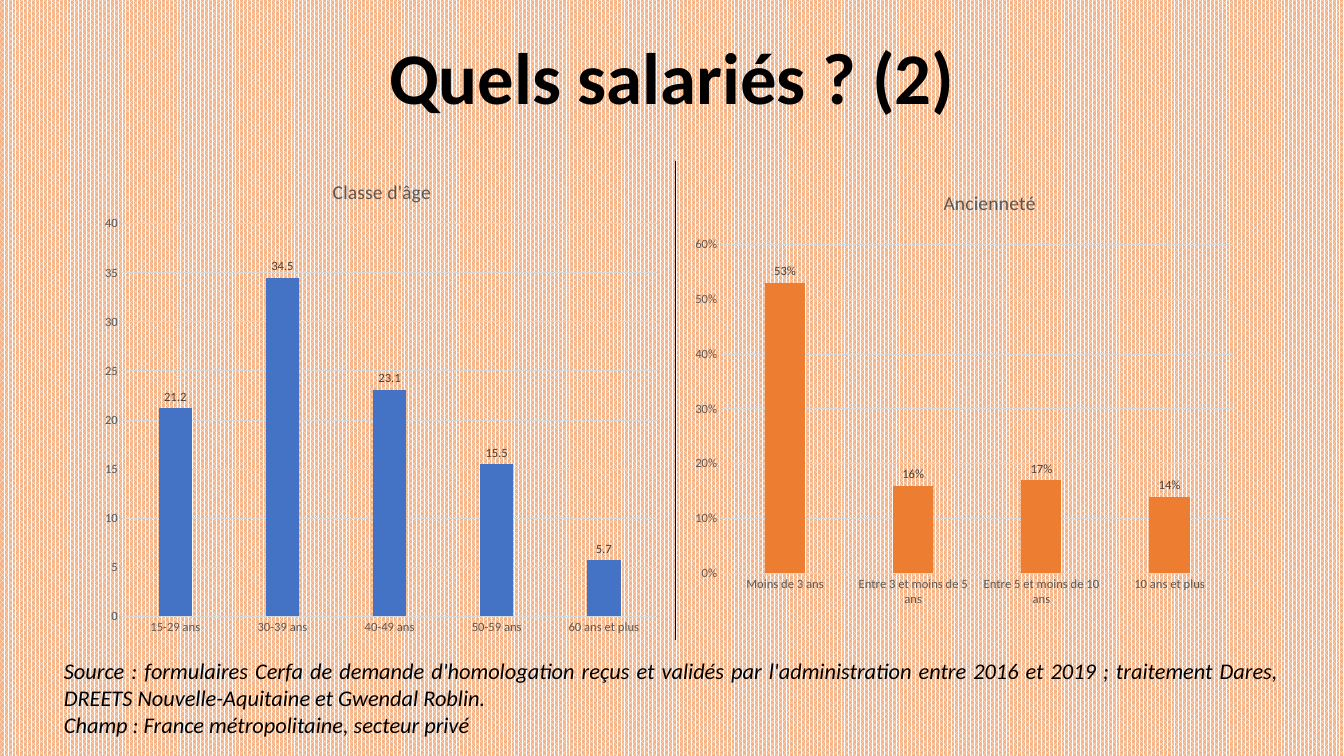
from pptx import Presentation
from pptx.chart.data import CategoryChartData
from pptx.dml.color import RGBColor
from pptx.enum.chart import XL_CHART_TYPE, XL_LABEL_POSITION as LabelPos, XL_TICK_MARK as Tick
from pptx.enum.dml import MSO_PATTERN
from pptx.enum.shapes import MSO_CONNECTOR
from pptx.enum.text import MSO_ANCHOR as Anchor, PP_ALIGN as Align
from pptx.oxml import parse_xml
from pptx.oxml.ns import nsdecls, qn
from pptx.oxml.xmlchemy import OxmlElement
from pptx.util import Emu, Pt
from dataclasses import dataclass


@dataclass(frozen=True)
class Theme:
    font: str = "Calibri"
    text: str = "000000"
    muted: str = "595959"
    label: str = "404040"
    grid: str = "D9D9D9"
    age: str = "4472C4"
    seniority: str = "ED7D31"
    paper: str = "F4B183"
    weave: str = "FFFFFF"
    title_size: int = 52
    source_size: int = 16
    chart_title_size: int = 14
    chart_size: int = 10
    axis_size: int = 9


THEME = Theme()
PX = 914400 / 100.8
rgb = RGBColor.from_string


def px(*lengths):
    return [Emu(round(length * PX)) for length in lengths]


def write(frame, *lines, size, color=THEME.text, align=Align.CENTER,
          bold=False, italic=False, spacing=None):
    """Put one paragraph per line of text into a text frame."""
    for number, line in enumerate(lines):
        paragraph = frame.add_paragraph() if number else frame.paragraphs[0]
        paragraph.alignment = align
        paragraph.line_spacing = spacing
        run = paragraph.add_run()
        run.text = line
        run.font.name, run.font.size = THEME.font, Pt(size)
        run.font.bold, run.font.italic = bold, italic
        run.font.color.rgb = rgb(color)


deck = Presentation()
deck.slide_width, deck.slide_height = px(1344, 756)
slide = deck.slides.add_slide(deck.slide_layouts[6])
weave = slide.background.fill
weave.patterned()
weave.pattern = MSO_PATTERN.PERCENT_75
weave.fore_color.rgb = rgb(THEME.weave)
weave.back_color.rgb = rgb(THEME.paper)

heading = slide.shapes.add_textbox(*px(92, 20, 1160, 121)).text_frame
heading.word_wrap = True
heading.vertical_anchor = Anchor.MIDDLE
write(heading, "Quels salariés ? (2)", size=THEME.title_size, bold=True, spacing=0.9)

# Title and plot places are fractions of the chart frame
CHARTS = [
    dict(title="Classe d'âge", box=(93, 155, 576, 491), color=THEME.age,
         shares={"15-29 ans": 21.2, "30-39 ans": 34.5, "40-49 ans": 23.1,
                 "50-59 ans": 15.5, "60 ans et plus": 5.7},
         top=40, step=5, formats=("0", "0.0"),
         title_at=dict(x=0.41, y=0.04), plot_at=dict(x=0.05, y=0.14, w=0.93, h=0.8)),
    dict(title="Ancienneté", box=(675, 161, 576, 491), color=THEME.seniority,
         shares={"Moins de 3 ans": 0.53, "Entre 3 et moins de 5 ans": 0.16,
                 "Entre 5 et moins de 10 ans": 0.17, "10 ans et plus": 0.14},
         top=0.6, step=0.1, formats=("0%", "0%"),
         title_at=dict(x=0.46, y=0.05), plot_at=dict(x=0.08, y=0.17, w=0.89, h=0.67)),
]

for panel in CHARTS:
    axis_format, label_format = panel["formats"]
    data = CategoryChartData(number_format=label_format)
    data.categories = list(panel["shares"])
    data.add_series("Series 1", list(panel["shares"].values()))
    chart = slide.shapes.add_chart(
        XL_CHART_TYPE.COLUMN_CLUSTERED, *px(*panel["box"]), data).chart
    chart.has_legend = False
    chart.font.name, chart.font.size = THEME.font, Pt(THEME.chart_size)
    chart.font.color.rgb = rgb(THEME.text)
    write(chart.chart_title.text_frame, panel["title"],
          size=THEME.chart_title_size, color=THEME.muted)

    ages_axis, share_axis = chart.category_axis, chart.value_axis
    for axis in (ages_axis, share_axis):
        axis.major_tick_mark = axis.minor_tick_mark = Tick.NONE
        axis.tick_labels.font.name = THEME.font
        axis.tick_labels.font.size = Pt(THEME.axis_size)
        axis.tick_labels.font.color.rgb = rgb(THEME.muted)
    share_axis.minimum_scale, share_axis.maximum_scale = 0, panel["top"]
    share_axis.major_unit = panel["step"]
    share_axis.tick_labels.number_format = axis_format
    share_axis.tick_labels.number_format_is_linked = False
    share_axis.format.line.fill.background()
    for rule in (ages_axis.format.line, share_axis.major_gridlines.format.line):
        rule.color.rgb = rgb(THEME.grid)
        rule.width = Pt(0.75)

    columns = chart.plots[0]
    columns.vary_by_categories = False
    columns.gap_width, columns.overlap = 219, -27
    fill = columns.series[0].format.fill
    fill.solid()
    fill.fore_color.rgb = rgb(panel["color"])
    columns.has_data_labels = True
    labels = columns.data_labels
    labels.show_value = True
    labels.position = LabelPos.OUTSIDE_END
    labels.number_format, labels.number_format_is_linked = label_format, False
    labels.font.name, labels.font.size = THEME.font, Pt(THEME.axis_size)
    labels.font.color.rgb = rgb(THEME.label)

    chart_xml = chart.element.find(qn("c:chart"))
    for tag, index, place in (("c:title", 1, panel["title_at"]),
                              ("c:plotArea", 0, panel["plot_at"])):
        target = '<c:layoutTarget val="inner"/>' if tag == "c:plotArea" else ""
        modes = "".join(f'<c:{side}Mode val="edge"/>' for side in "xy")
        sizes = "".join(f'<c:{key} val="{value}"/>' for key, value in place.items())
        part = chart_xml.find(qn(tag))
        for automatic in part.findall(qn("c:layout")):
            part.remove(automatic)
        part.insert(index, parse_xml(
            f'<c:layout {nsdecls("c")}><c:manualLayout>{target}{modes}{sizes}'
            '</c:manualLayout></c:layout>'))

divider = slide.shapes.add_connector(MSO_CONNECTOR.STRAIGHT, *px(675, 161, 675, 640))
divider.line.color.rgb = rgb(THEME.text)
divider.line.width = Pt(0.5)
divider.element.spPr.append(OxmlElement("a:effectLst"))

source = slide.shapes.add_textbox(*px(54, 652, 1235, 92)).text_frame
source.word_wrap = True
write(source,
      "Source : formulaires Cerfa de demande d'homologation reçus et validés par "
      "l'administration entre 2016 et 2019 ; traitement Dares, DREETS "
      "Nouvelle-Aquitaine et Gwendal Roblin.",
      "Champ : France métropolitaine, secteur privé",
      size=THEME.source_size, align=Align.JUSTIFY, italic=True)

deck.save("out.pptx")
